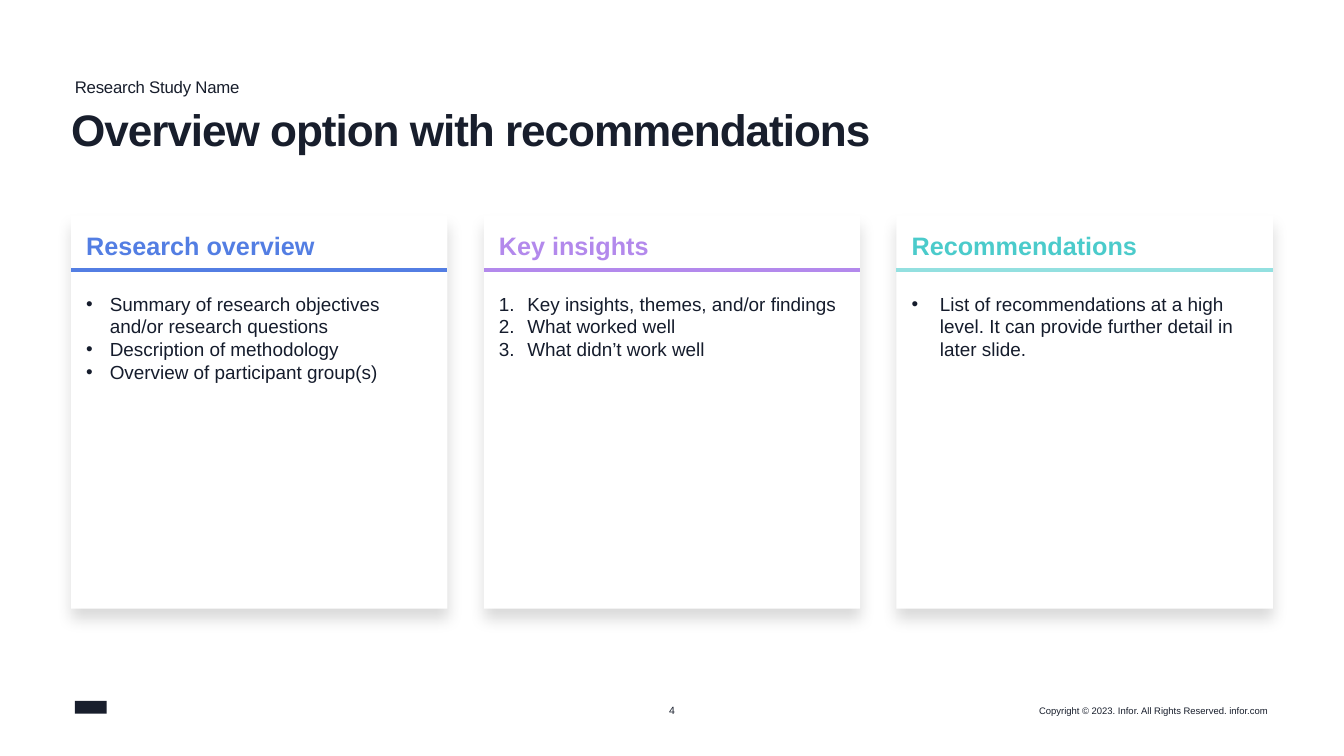
from dataclasses import dataclass

from lxml.etree import SubElement as Sub
from pptx import Presentation
from pptx.dml.color import RGBColor as RGB
from pptx.enum.shapes import MSO_CONNECTOR as Link, MSO_SHAPE as Kind
from pptx.enum.text import MSO_ANCHOR as Anchor, PP_ALIGN as Align
from pptx.oxml.ns import qn
from pptx.util import Pt


@dataclass(frozen=True)
class Theme:
    font: str = "Arial"
    ink: str = "181E2C"
    body: str = "151C2C"
    white: str = "FFFFFF"
    shade: str = "000000"
    blue: str = "537EE3"
    violet: str = "B389EC"
    teal: str = "4BCBCB"
    aqua: str = "93E0E0"
    title: int = 42
    head: int = 24
    text: int = 18
    label: int = 16
    page: int = 10
    legal: int = 9


THEME = Theme()
WIDE, HIGH = 1280.16, 720
LEFT, TOP = 67.68, 205.2
CARD_W, CARD_H, GAP = 358.56, 374.4, 34.56
BULLET, NUMBER = ("buChar", "char", "•"), ("buAutoNum", "type", "arabicPeriod")

# heading, heading colour, rule colour, list mark, indent, items
CARDS = [
    ("Research overview", THEME.blue, THEME.blue, BULLET, 22.5,
     ["Summary of research objectives and/or research questions",
      "Description of methodology",
      "Overview of participant group(s)"]),
    ("Key insights", THEME.violet, THEME.violet, NUMBER, 27,
     ["Key insights, themes, and/or findings",
      "What worked well",
      "What didn’t work well"]),
    ("Recommendations", THEME.teal, THEME.aqua, BULLET, 27,
     ["List of recommendations at a high level. "
      "It can provide further detail in later slide."]),
]


def style(para, size, color, bold=False, track=0):
    """Format every run; track is letter spacing in points."""
    for run in para.runs:
        font = run.font
        font.name, font.size, font.bold = THEME.font, Pt(size), bold
        font.color.rgb = RGB.from_string(color)
        if track:
            run._r.get_or_add_rPr().set("spc", str(round(track * 100)))


def inset(frame, pad, anchor):
    frame.margin_left = frame.margin_right = Pt(pad)
    frame.margin_top = frame.margin_bottom = Pt(pad)
    frame.vertical_anchor = anchor


def label(slide, box, text, size, align=Align.LEFT, anchor=Anchor.TOP,
          wrap=True, lead=1.0, bold=False, track=0):
    frame = slide.shapes.add_textbox(*map(Pt, box)).text_frame
    frame.word_wrap = wrap
    inset(frame, 0, anchor)
    para = frame.paragraphs[0]
    para.text, para.alignment, para.line_spacing = text, align, lead
    style(para, size, THEME.ink, bold, track)


def block(slide, box, color):
    shape = slide.shapes.add_shape(Kind.RECTANGLE, *map(Pt, box))
    shape.shadow.inherit = False
    shape.fill.solid()
    shape.fill.fore_color.rgb = RGB.from_string(color)
    shape.line.fill.background()
    return shape


def shadow(shape):
    """Soft shadow cast straight down."""
    effects = shape._element.spPr.find(qn("a:effectLst"))
    outer = Sub(effects, qn("a:outerShdw"), blurRad=str(Pt(15)),
                dist=str(Pt(10)), dir="5400000", algn="t", rotWithShape="0")
    tint = Sub(outer, qn("a:srgbClr"), val=THEME.shade)
    Sub(tint, qn("a:alpha"), val="15000")


def mark(para, kind, indent):
    """Give a paragraph a bullet or number with a hanging indent."""
    props = para._p.get_or_add_pPr()
    props.set("marL", str(Pt(indent)))
    props.set("indent", str(-Pt(indent)))
    Sub(props, qn("a:buFont"), typeface=THEME.font)
    tag, key, value = kind
    Sub(props, qn("a:" + tag), {key: value})


def rule(slide, x, y, width, color):
    line = slide.shapes.add_connector(
        Link.STRAIGHT, Pt(x), Pt(y), Pt(x + width), Pt(y))
    line.line.color.rgb = RGB.from_string(color)
    line.line.width = Pt(4)
    Sub(line._element.spPr, qn("a:effectLst"))


def card(slide, box, head, color, edge, kind, indent, items):
    x, y, width, _ = box
    shape = block(slide, box, THEME.white)
    shadow(shape)
    frame = shape.text_frame
    frame.word_wrap = True
    inset(frame, 14.4, Anchor.TOP)
    first = frame.paragraphs[0]
    first.text, first.alignment, first.space_after = head, Align.LEFT, Pt(30)
    style(first, THEME.head, color, bold=True)
    for item in items:
        para = frame.add_paragraph()
        para.text, para.alignment = item, Align.LEFT
        mark(para, kind, indent)
        style(para, THEME.text, THEME.body)
    rule(slide, x, y + 51.84, width, edge)


def header(slide, box):
    x, y, width, height = box
    label(slide, (x + 3.6, y, width - 3.6, 16.56), "Research Study Name",
          THEME.label, lead=1.05, track=-0.2)
    label(slide, (x, y + 31.68, width, height - 31.68),
          "Overview option with recommendations",
          THEME.title, lead=0.9, bold=True, track=-1)


def footer(slide, box):
    x, y, width, height = box
    block(slide, (x, y, 30.24, height), THEME.ink)
    label(slide, (WIDE / 2 - 6.12, y + 2.88, 12.24, height), "4", THEME.page,
          Align.CENTER, Anchor.MIDDLE, wrap=False)
    label(slide, (x + width - 221.76, y + 3.6, 221.76, 10.8),
          "Copyright © 2023. Infor. All Rights Reserved. infor.com",
          THEME.legal, Align.RIGHT, Anchor.MIDDLE, wrap=False)


def main():
    deck = Presentation()
    deck.slide_width, deck.slide_height = Pt(WIDE), Pt(HIGH)
    slide = deck.slides.add_slide(deck.slide_layouts[6])
    header(slide, (LEFT, 72, 1138.32, 118.08))
    for i, parts in enumerate(CARDS):
        x = LEFT + i * (CARD_W + GAP)
        card(slide, (x, TOP, CARD_W, CARD_H), *parts)
    footer(slide, (71.28, 667.44, 1136.16, 12.24))
    deck.save("out.pptx")


if __name__ == "__main__":
    main()
